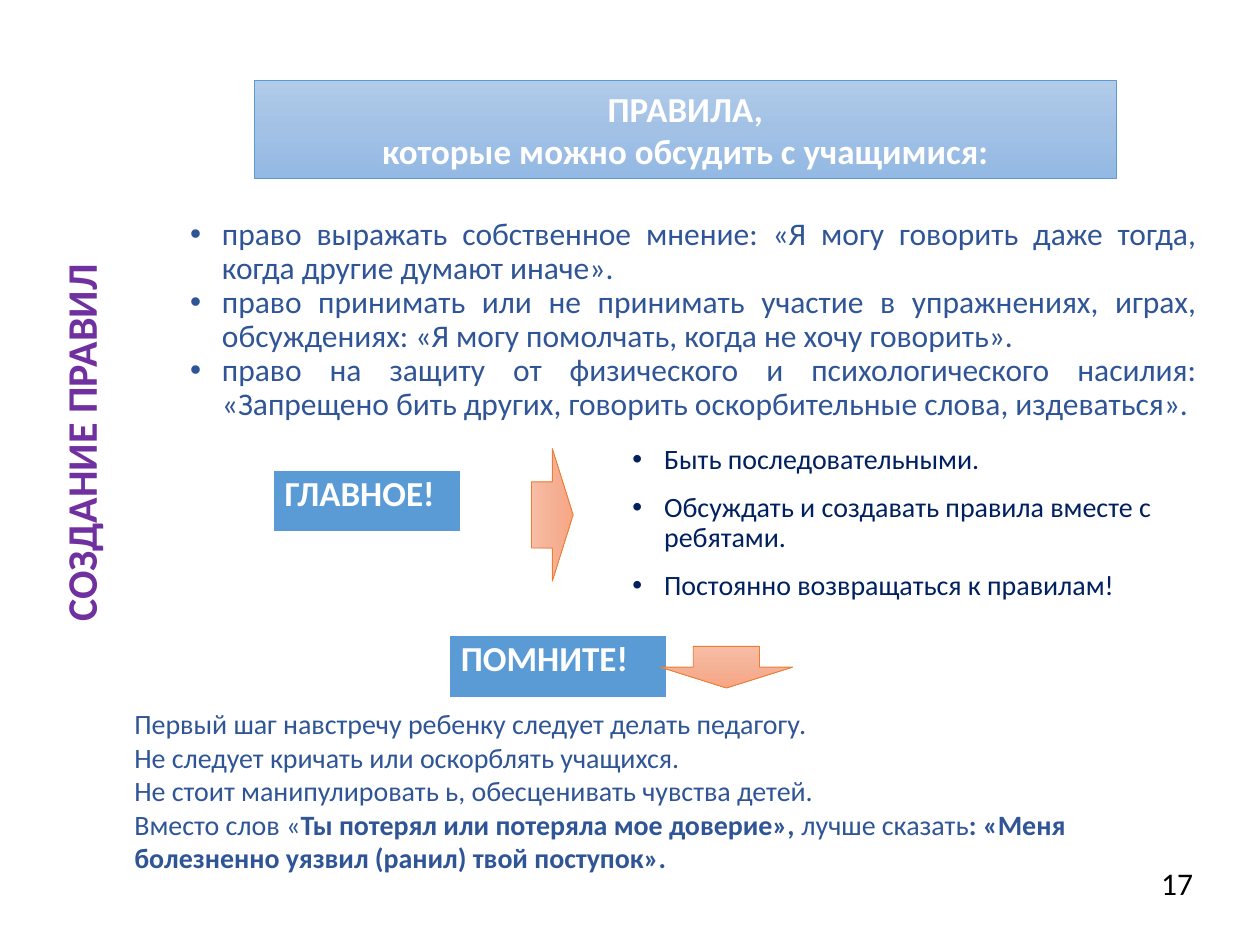
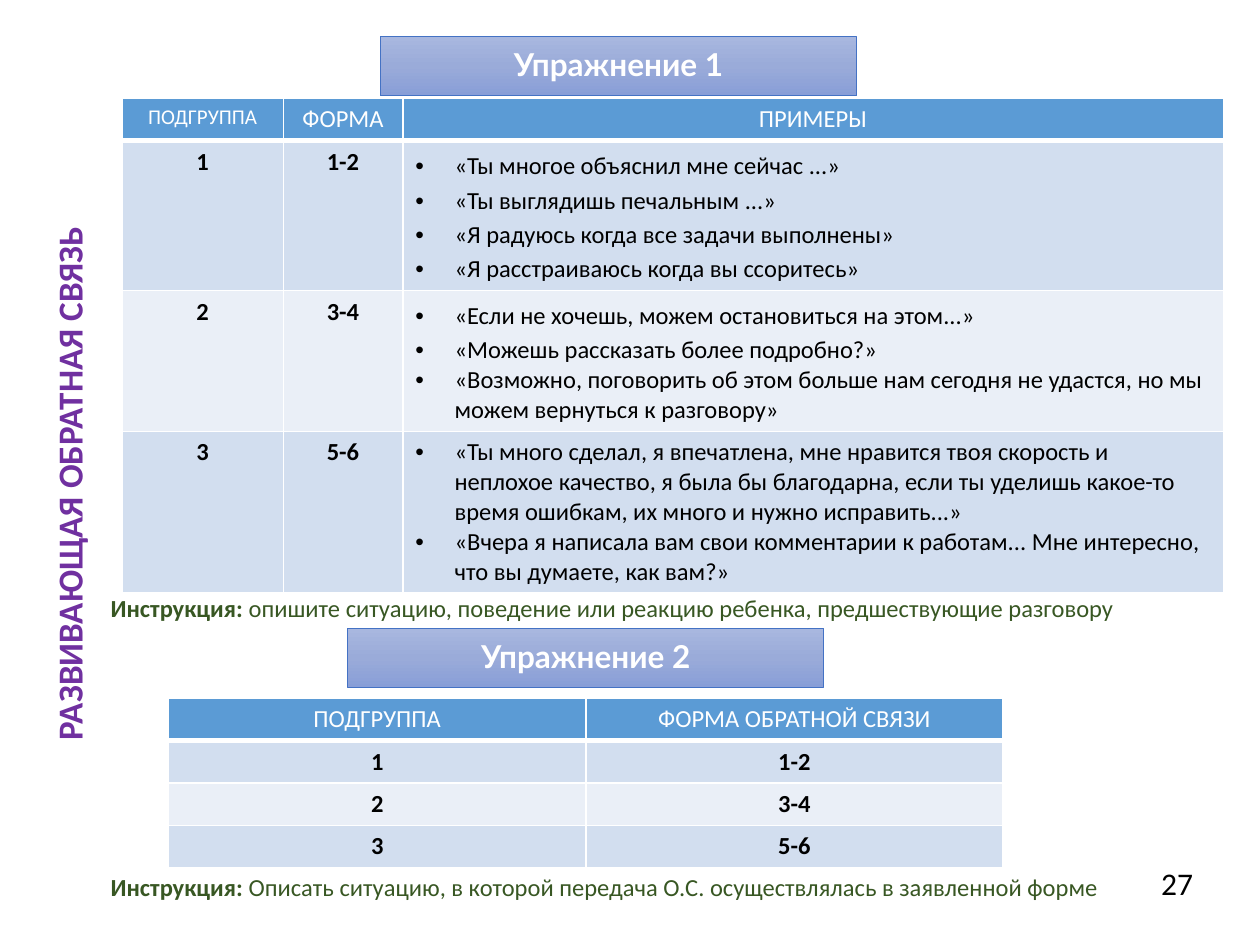
from copy import deepcopy

from lxml.etree import SubElement
from pptx import Presentation
from pptx.dml.color import RGBColor
from pptx.enum.shapes import MSO_SHAPE as SHAPE
from pptx.enum.text import MSO_ANCHOR as ANCHOR, MSO_AUTO_SIZE as AUTO, PP_ALIGN as ALIGN
from pptx.oxml.ns import qn
from pptx.util import Cm, Pt

WHITE = RGBColor(0xFF, 0xFF, 0xFF)
BLACK = RGBColor(0x00, 0x00, 0x00)
PURPLE = RGBColor(0x70, 0x30, 0xA0)
NAVY = RGBColor(0x00, 0x20, 0x60)
BLUE = RGBColor(0x2F, 0x55, 0x97)
GREEN = RGBColor(0x38, 0x57, 0x23)
SKY = RGBColor(0x5B, 0x9B, 0xD5)
ORANGE = RGBColor(0xED, 0x7D, 0x31)
INDIGO = RGBColor(0x44, 0x72, 0xC4)
BANDS = (RGBColor(0xEA, 0xEF, 0xF7), RGBColor(0xD2, 0xDE, 0xEF))
SKY_STOPS = (RGBColor(0xB1, 0xCB, 0xE9), RGBColor(0xA3, 0xC1, 0xE5), RGBColor(0x93, 0xB9, 0xE4))
PEACH_STOPS = (RGBColor(0xF7, 0xBD, 0xA5), RGBColor(0xF5, 0xB1, 0x96), RGBColor(0xF8, 0xA5, 0x82))
INDIGO_STOPS = (RGBColor(0xA8, 0xB7, 0xDF), RGBColor(0x9A, 0xAB, 0xD9), RGBColor(0x88, 0x9E, 0xD7))
FONT = "Calibri"
HEADER_FONT = "Lato"


def write(tf, paras, size=16, color=BLACK, bold=False, font=FONT,
          align=ALIGN.LEFT, spacing=1.0, before=0, indent=None):
    for para in paras:
        first = tf.paragraphs[0]
        is_first = not first.runs
        p = first if is_first else tf.add_paragraph()
        p.alignment = align
        p.line_spacing = spacing
        p.space_before = Pt(0 if is_first else before)
        if indent:
            pPr = p._p.get_or_add_pPr()
            pPr.set("marL", str(Cm(indent)))
            pPr.set("indent", str(-Cm(indent)))
            SubElement(pPr, qn("a:buFont"), typeface="Arial")
            SubElement(pPr, qn("a:buChar"), char="•")
        for text, strong in [(para, bold)] if isinstance(para, str) else para:
            r = p.add_run()
            r.text = text
            r.font.name, r.font.size, r.font.bold = font, Pt(size), strong
            r.font.color.rgb = color


def place(sp, box):
    sp.left, sp.top, sp.width, sp.height = map(Cm, box)
    tf = sp.text_frame
    tf.word_wrap = True
    tf.auto_size = AUTO.NONE
    tf.vertical_anchor = ANCHOR.TOP
    return tf


def text_box(s, box, paras, **fmt):
    sp = s.shapes.add_textbox(0, 0, 0, 0)
    write(place(sp, box), paras, **fmt)


def panel(s, box, fill, line, line_width=0.5, kind=SHAPE.RECTANGLE):
    sp = s.shapes.add_shape(kind, *map(Cm, box))
    sp.shadow.inherit = False
    sp.line.color.rgb = line
    sp.line.width = Pt(line_width)
    if isinstance(fill, RGBColor):
        sp.fill.solid()
        sp.fill.fore_color.rgb = fill
    else:
        sp.fill.gradient()
        sp.fill.gradient_angle = 270
        stops = sp._element.spPr.find(".//" + qn("a:gsLst"))
        stops.insert(1, deepcopy(stops[0]))
        for i, stop in enumerate(sp.fill.gradient_stops):
            stop.position = i / 2
            stop.color.rgb = fill[i]
    place(sp, box)
    return sp


def arrow(s, box, rotation=0):
    sp = panel(s, box, PEACH_STOPS, ORANGE, kind=SHAPE.DOWN_ARROW)
    sp.rotation = rotation


def label(s, box, text):
    sp = panel(s, box, SKY, WHITE, 1.5)
    write(sp.text_frame, [text], size=20, color=WHITE, bold=True, spacing=0.9)


def side_title(s, box, text, size):
    sp = s.shapes.title
    write(place(sp, box), [text], size=size, color=PURPLE, bold=True)
    sp.rotation = 270


def page_number(s, number):
    text_box(s, (23.16, 17.3, 1.57, 1.02), [number], size=18)


def banner(s, box, lines):
    tf = panel(s, box, SKY_STOPS, SKY).text_frame
    tf.vertical_anchor = ANCHOR.MIDDLE
    write(tf, lines, size=20, color=WHITE, bold=True, align=ALIGN.CENTER)


def rights_list(s, box, rights):
    write(place(s.placeholders[1], box), rights, size=18, color=BLUE,
          align=ALIGN.JUSTIFY, spacing=0.9, indent=0.64)


def main_points(s, box, heading, points):
    x, y, w, h = box
    label(s, (x, y + 0.61, 3.81, 1.27), heading)
    arrow(s, (x + 4.31, y + 1.1, 2.67, 0.84), 270)
    text_box(s, (x + 7.01, y, w - 7.01, h), points, color=NAVY,
             spacing=0.9, before=10, indent=0.64)


def reminder(s, box, heading, advice):
    x, y, w, h = box
    label(s, (x + 6.58, y, 4.42, 1.27), heading)
    arrow(s, (x + 10.85, y + 0.23, 2.67, 0.84))
    text_box(s, (x, y + 1.32, w, h - 1.32), advice, color=BLUE)


def style_cell(cell, row):
    tcPr = cell._tc.get_or_add_tcPr()
    for side in "LRTB":
        thick = side == "B" and row == 0 or side == "T" and row == 1
        ln = SubElement(tcPr, qn("a:ln" + side), w=str(Pt(3 if thick else 1)))
        fill = SubElement(ln, qn("a:solidFill"))
        SubElement(fill, qn("a:srgbClr"), val=str(WHITE))
    cell.fill.solid()
    cell.fill.fore_color.rgb = BANDS[row % 2] if row else SKY


def grid(s, x, y, widths, heights, rows, first_size=14):
    table = s.shapes.add_table(len(rows), len(widths), Cm(x), Cm(y),
                               Cm(sum(widths)), Cm(sum(heights))).table
    for col, width in zip(table.columns, widths):
        col.width = Cm(width)
    for i, (row, height) in enumerate(zip(rows, heights)):
        table.rows[i].height = Cm(height)
        for j, content in enumerate(row):
            cell = table.cell(i, j)
            style_cell(cell, i)
            if isinstance(content, str):
                write(cell.text_frame, [content], bold=i > 0, align=ALIGN.CENTER,
                      size=14 if i or j else first_size, color=BLACK if i else WHITE)
            else:
                loose, tight = content
                write(cell.text_frame, loose, size=14, align=ALIGN.JUSTIFY,
                      spacing=1.15, indent=0.79)
                write(cell.text_frame, tight, size=14, indent=0.79)


def exercise(s, box, title, title_dx, table_dx, table_dy, instruction, **table):
    x, y, w, h = box
    grid(s, x + table_dx, y + table_dy, **table)
    tf = panel(s, (x + title_dx, y, 9.6, 1.19), INDIGO_STOPS, INDIGO).text_frame
    tf.margin_left = tf.margin_right = tf.margin_top = tf.margin_bottom = Cm(0.25)
    write(tf, [title], size=18, color=WHITE, bold=True, font=HEADER_FONT,
          align=ALIGN.CENTER, spacing=0.9)
    text_box(s, (x, y + h - 0.86, w, 0.86),
             [[("Инструкция: ", True), (instruction, False)]], size=14, color=GREEN)


def rules_slide(prs):
    s = prs.slides.add_slide(prs.slide_layouts[1])
    side_title(s, (-2.31, 8.23, 7.85, 1.27), "СОЗДАНИЕ ПРАВИЛ", 24)
    banner(s, (5.13, 1.63, 17.37, 1.96),
           ["ПРАВИЛА,", "которые можно обсудить с учащимися:"])
    rights_list(s, (3.58, 4.27, 20.8, 5.84), [
        "право выражать собственное мнение: «Я могу говорить даже тогда, "
        "когда другие думают иначе».",
        "право принимать или не принимать участие в упражнениях, играх, "
        "обсуждениях: «Я могу помолчать, когда не хочу говорить».",
        "право на защиту от физического и психологического насилия: "
        "«Запрещено бить других, говорить оскорбительные слова, издеваться».",
    ])
    main_points(s, (5.49, 8.86, 18.64, 3.48), "ГЛАВНОЕ!", [
        "Быть последовательными.",
        "Обсуждать и создавать правила вместе с ребятами.",
        "Постоянно возвращаться к правилам!",
    ])
    reminder(s, (2.46, 12.8, 19.56, 5), "ПОМНИТЕ!", [
        "Первый шаг навстречу ребенку следует делать педагогу.",
        "Не следует кричать или оскорблять учащихся.",
        "Не стоит манипулировать ь, обесценивать чувства детей.",
        [("Вместо слов «", False), ("Ты потерял или потеряла мое доверие», ", True),
         ("лучше сказать", False),
         (": «Меня болезненно уязвил (ранил) твой поступок».", True)],
    ])
    page_number(s, "17")


def feedback_slide(prs):
    s = prs.slides.add_slide(prs.slide_layouts[5])
    side_title(s, (-5.08, 8.15, 12.95, 1.12), "РАЗВИВАЮЩАЯ ОБРАТНАЯ СВЯЗЬ", 20)
    groups = [("1", "1-2"), ("2", "3-4"), ("3", "5-6")]
    examples = [
        (["«Ты многое объяснил мне сейчас ...»",
          "«Ты выглядишь печальным ...»",
          "«Я радуюсь когда все задачи выполнены»",
          "«Я расстраиваюсь когда вы ссоритесь»"], []),
        (["«Если не хочешь, можем остановиться на этом...»",
          "«Можешь рассказать более подробно?»"],
         ["«Возможно, поговорить об этом больше нам сегодня не удастся, "
          "но мы можем вернуться к разговору»"]),
        ([], ["«Ты много сделал, я впечатлена, мне нравится твоя скорость и "
              "неплохое качество, я была бы благодарна, если ты уделишь какое-то "
              "время ошибкам, их много и нужно исправить...»",
              "«Вчера я написала вам свои комментарии к работам... "
              "Мне интересно, что вы думаете, как вам?»"]),
    ]
    exercise(s, (1.98, 0.74, 22.3, 11.96), "Упражнение 1", 5.69, 0.48, 1.24,
             "опишите ситуацию, поведение или реакцию ребенка, предшествующие разговору",
             widths=(3.25, 2.41, 16.54), heights=(0.85, 2.98, 2.79, 3.2), first_size=12,
             rows=[("ПОДГРУППА", "ФОРМА", "ПРИМЕРЫ")]
             + [(*group, cell) for group, cell in zip(groups, examples)])
    exercise(s, (1.98, 12.67, 21.1, 5.64), "Упражнение 2", 5.03, 1.42, 1.4,
             "Описать ситуацию, в которой передача О.С. осуществлялась в заявленной форме",
             widths=(8.41,) * 2, heights=(0.85,) * 4,
             rows=[("ПОДГРУППА", "ФОРМА ОБРАТНОЙ СВЯЗИ")] + groups)
    page_number(s, "27")


def main():
    prs = Presentation()
    prs.slide_width, prs.slide_height = Cm(25.4), Cm(19.05)
    rules_slide(prs)
    feedback_slide(prs)
    prs.save("out.pptx")


if __name__ == "__main__":
    main()
